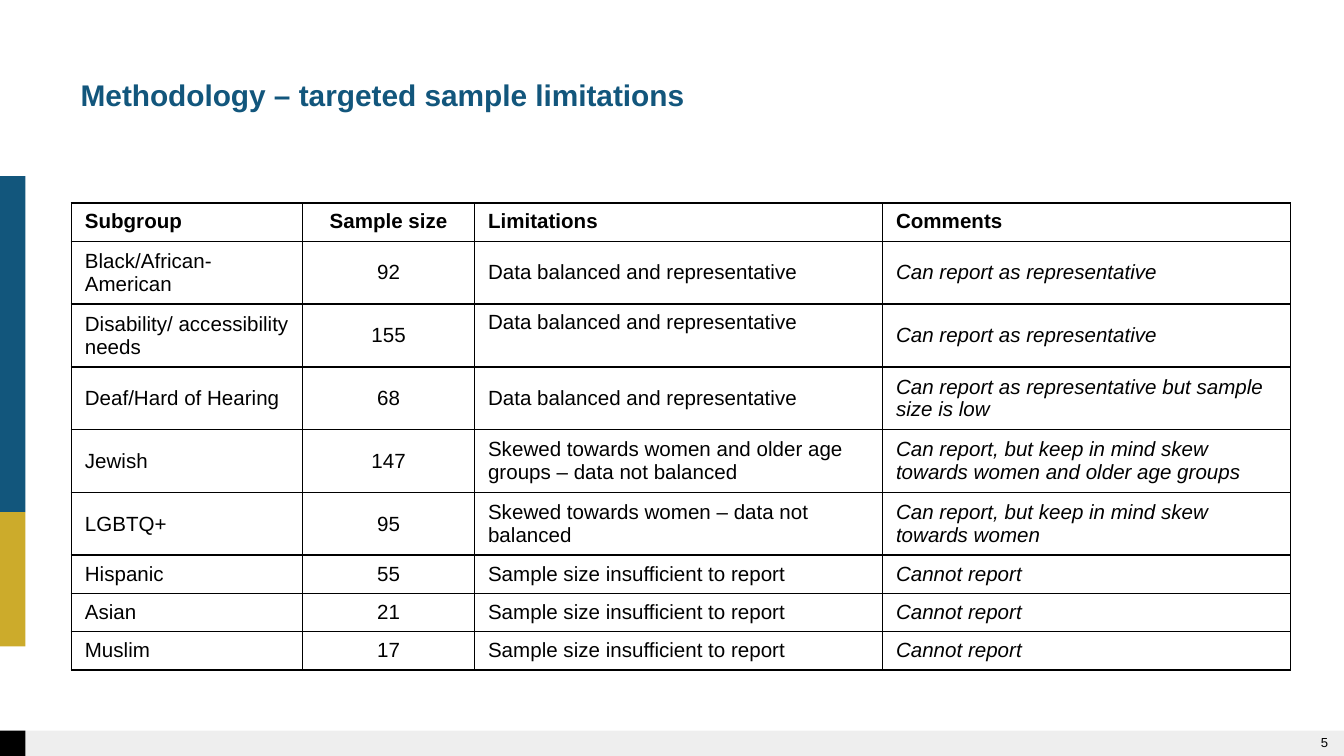
from lxml import etree
from pptx import Presentation
from pptx import util as u
from pptx.dml.color import RGBColor
from pptx.enum import shapes, text
from pptx.oxml import ns

BLUE = RGBColor(0x12, 0x56, 0x7C)
GOLD = RGBColor(0xCC, 0xAB, 0x2B)
GREY = RGBColor(0x59, 0x59, 0x59)
BLACK = RGBColor(0, 0, 0)
LEFT, CENTER, RIGHT = text.PP_ALIGN.LEFT, text.PP_ALIGN.CENTER, text.PP_ALIGN.RIGHT
TOP, MIDDLE = text.MSO_ANCHOR.TOP, text.MSO_ANCHOR.MIDDLE


def write(frame, words, size=11, color=BLACK, bold=False, italic=False, align=LEFT):
    frame.word_wrap = True
    paragraph = frame.paragraphs[0]
    paragraph.alignment = align
    run = paragraph.add_run()
    run.text = words
    run.font.name = "Arial"
    run.font.size = u.Pt(size)
    run.font.color.rgb = color
    run.font.bold = bold
    run.font.italic = italic


def outline(cell):
    properties = cell._tc.get_or_add_tcPr()
    for position, side in enumerate(("a:lnL", "a:lnR", "a:lnT", "a:lnB")):
        border = etree.Element(ns.qn(side), w=str(u.Pt(1)))
        solid = etree.SubElement(border, ns.qn("a:solidFill"))
        etree.SubElement(solid, ns.qn("a:srgbClr"), val=str(BLACK))
        properties.insert(position, border)


deck = Presentation()
deck.slide_width = u.Cm(25.4)
deck.slide_height = u.Cm(14.29)
slide = deck.slides.add_slide(deck.slide_layouts[5])

bands = [
    (0, 13.81, 25.4, 0.48, GREY),
    (0, 3.33, 0.48, 6.35, BLUE),
    (0, 9.68, 0.48, 2.54, GOLD),
    (0, 13.81, 0.48, 0.48, BLACK),
]
for left, top, width, height, color in bands:
    band = slide.shapes.add_shape(
        shapes.MSO_SHAPE.RECTANGLE, u.Cm(left), u.Cm(top), u.Cm(width), u.Cm(height))
    band.shadow.inherit = False
    band.fill.solid()
    band.fill.fore_color.rgb = color
    band.line.fill.background()
    if color == GREY:
        tint = band._element.spPr.find(".//" + ns.qn("a:srgbClr"))
        etree.SubElement(tint, ns.qn("a:alpha"), val="10000")

heading = slide.shapes.title
heading.left, heading.top = u.Cm(1.27), u.Cm(1.32)
heading.width, heading.height = u.Cm(22.86), u.Cm(1.85)
heading.text_frame.vertical_anchor = TOP
write(heading.text_frame, "Methodology – targeted sample limitations",
      size=16, color=BLUE, bold=True)

page_number = slide.shapes.add_textbox(u.Cm(19.43), u.Cm(13.82), u.Cm(5.92), u.Cm(0.43))
page_number.text_frame.vertical_anchor = MIDDLE
page_number.text_frame.margin_top = page_number.text_frame.margin_bottom = 0
write(page_number.text_frame, "5", size=7, align=RIGHT)

BALANCED = "Data balanced and representative"
REPORTABLE = "Can report as representative"
INSUFFICIENT = "Sample size insufficient to report"
UNREPORTABLE = "Cannot report"
subgroups = [
    ("Subgroup", "Sample size", "Limitations", "Comments"),
    ("Black/African-American", "92", BALANCED, REPORTABLE),
    ("Disability/ accessibility needs", "155", BALANCED, REPORTABLE),
    ("Deaf/Hard of Hearing", "68", BALANCED, REPORTABLE + " but sample size is low"),
    ("Jewish", "147", "Skewed towards women and older age groups – data not balanced",
     "Can report, but keep in mind skew towards women and older age groups"),
    ("LGBTQ+", "95", "Skewed towards women – data not balanced",
     "Can report, but keep in mind skew towards women"),
    ("Hispanic", "55", INSUFFICIENT, UNREPORTABLE),
    ("Asian", "21", INSUFFICIENT, UNREPORTABLE),
    ("Muslim", "17", INSUFFICIENT, UNREPORTABLE),
]
column_widths = [4.37, 3.25, 7.71, 7.71]
row_heights = [0.71] + [1.16] * 5 + [0.71] * 3
limitations = slide.shapes.add_table(
    len(subgroups), len(column_widths), u.Cm(1.35), u.Cm(3.84),
    u.Cm(sum(column_widths)), u.Cm(sum(row_heights))).table
for column, width in zip(limitations.columns, column_widths):
    column.width = u.Cm(width)

for r, (entries, height) in enumerate(zip(subgroups, row_heights)):
    limitations.rows[r].height = u.Cm(height)
    for c, words in enumerate(entries):
        cell = limitations.cell(r, c)
        cell.fill.background()
        cell.vertical_anchor = TOP if r == 0 or (r, c) == (2, 2) else MIDDLE
        write(cell.text_frame, words, bold=r == 0, italic=r > 0 and c == 3,
              align=CENTER if c == 1 else LEFT)
        outline(cell)

deck.save("out.pptx")
